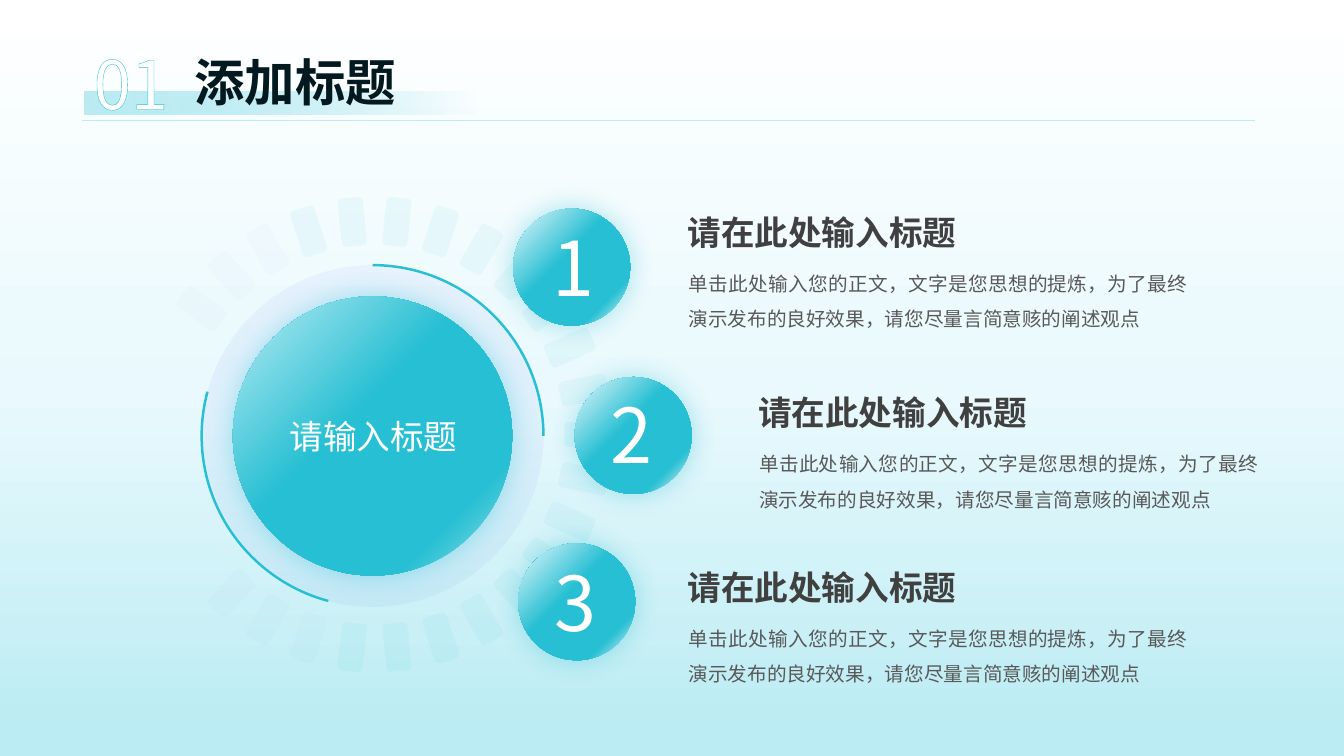
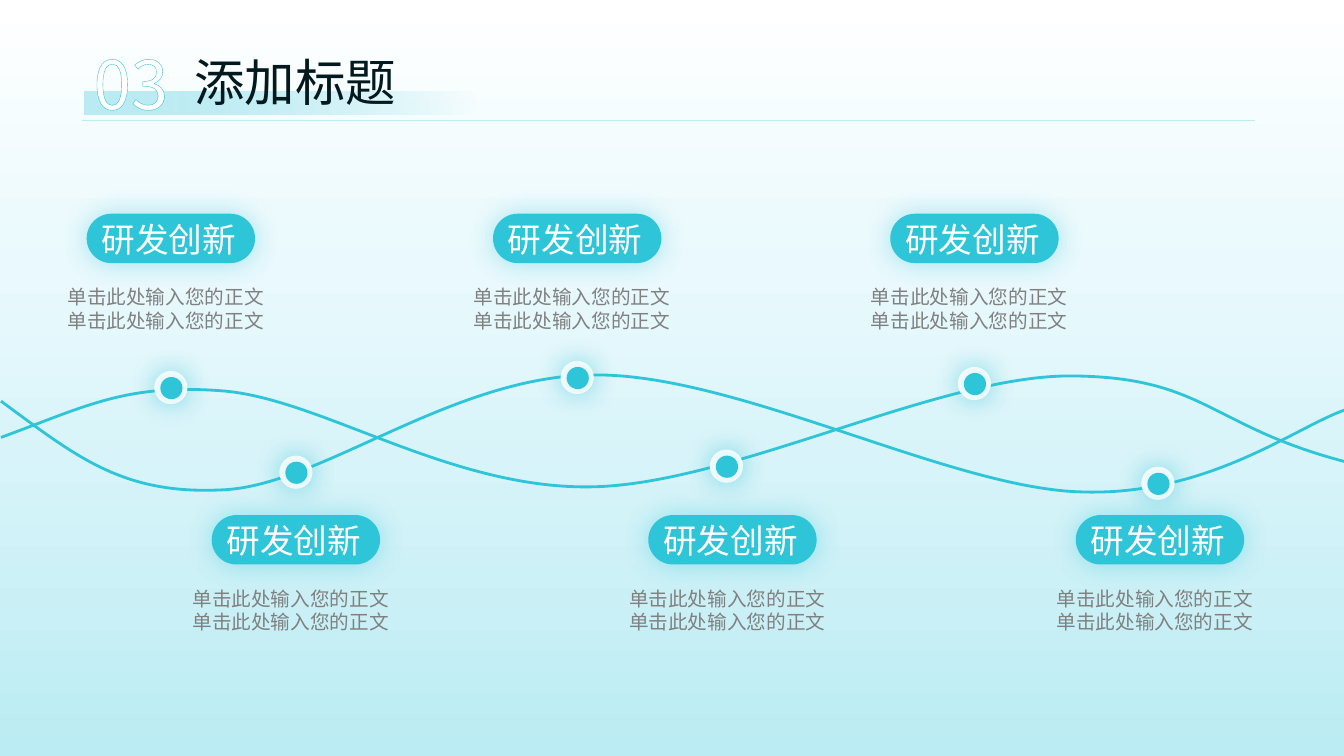
"""Build two teal slides: a numbered hub and a wave timeline."""
from copy import deepcopy
from math import cos, radians, sin

from lxml import etree
from pptx import Presentation
from pptx.dml.color import RGBColor
from pptx.enum.shapes import MSO_CONNECTOR, MSO_SHAPE
from pptx.enum.text import PP_ALIGN
from pptx.oxml.ns import qn
from pptx.util import Inches, Pt

OVAL, ARC = MSO_SHAPE.OVAL, MSO_SHAPE.ARC
RECT, ROUND = MSO_SHAPE.RECTANGLE, MSO_SHAPE.ROUNDED_RECTANGLE
STRAIGHT = MSO_CONNECTOR.STRAIGHT
CENTER, JUSTIFY = PP_ALIGN.CENTER, PP_ALIGN.JUSTIFY

FONT = "Noto Sans CJK SC"
WHITE = RGBColor(0xFF, 0xFF, 0xFF)
ICE = RGBColor(0xE9, 0xF9, 0xFD)
PALE = RGBColor(0xBB, 0xEC, 0xF3)
SKY = RGBColor(0x8D, 0xE0, 0xEB)
AQUA = RGBColor(0x79, 0xD9, 0xE8)
TEAL = RGBColor(0x27, 0xBF, 0xD3)
CYAN = RGBColor(0x2F, 0xC5, 0xD9)
BLUE = RGBColor(0x4C, 0x70, 0xF4)
INK = RGBColor(0x02, 0x19, 0x1F)
DARK = RGBColor(0x40, 0x40, 0x40)
GRAY = RGBColor(0x59, 0x59, 0x59)
MUTED = RGBColor(0x80, 0x80, 0x80)


def gradient(owner, fill, stops, angle):
    fill.gradient()
    fill.gradient_angle = angle
    gs_list = owner.element.find(".//" + qn("a:gsLst"))
    while len(gs_list) < len(stops):
        gs_list.append(deepcopy(gs_list[-1]))
    for stop, (position, color) in zip(fill.gradient_stops, stops):
        stop.position = position / 100
        stop.color.rgb = color
    return gs_list


def add_shape(s, kind, x, y, w, h, color=None, alpha=None, glow=None):
    sp = s.shapes.add_shape(kind, Inches(x), Inches(y), Inches(w), Inches(h))
    sp.shadow.inherit = False
    sp.line.fill.background()
    if color is None:
        sp.fill.background()
    else:
        sp.fill.solid()
        sp.fill.fore_color.rgb = color
    if alpha:
        clr = sp.element.spPr.find(qn("a:solidFill"))[0]
        etree.SubElement(clr, qn("a:alpha"), val=str(alpha * 1000))
    if glow:
        effects = sp.element.spPr.find(qn("a:effectLst"))
        shadow = etree.SubElement(effects, qn("a:outerShdw"), blurRad=str(Pt(19)),
                                  dist="0", algn="ctr", rotWithShape="0")
        clr = etree.SubElement(shadow, qn("a:srgbClr"), val=str(glow))
        etree.SubElement(clr, qn("a:alpha"), val="40000")
    return sp


prs = Presentation()
prs.slide_width, prs.slide_height = Inches(13.33), Inches(7.5)
layout = prs.slide_layouts[6]
for placeholder in list(layout.placeholders):
    layout.shapes.element.remove(placeholder.element)

hub = prs.slides.add_slide(layout)
wave = prs.slides.add_slide(layout)
for s, middle, end in ((hub, 52, 97), (wave, 36, 100)):
    gradient(s, s.background.fill, [(0, WHITE), (middle, ICE), (end, PALE)], 270)

band = add_shape(hub, RECT, 0.84, 0.91, 3.9, 0.23)
band_stops = gradient(band, band.fill, [(0, AQUA), (100, PALE)], 180)
etree.SubElement(band_stops[0][0], qn("a:alpha"), val="0")
rule = hub.shapes.add_connector(STRAIGHT, Inches(0.81), Inches(1.19),
                                Inches(12.45), Inches(1.19))
rule.line.color.rgb = PALE
rule.line.width = Pt(0.5)
etree.SubElement(rule.element.spPr, qn("a:effectLst"))
rule.element.remove(rule.element.find(qn("p:style")))
for sp in (band, rule):
    layout.shapes.element.append(sp.element)

texts = []
for s, number, bold in ((hub, "01", True), (wave, "03", False)):
    texts.append((s, 1.83, 0.46, 2.43, 0.71, "添加标题", 36, INK, {"bold": bold}))
    texts.append((s, 0.83, 0.37, 1.21, 0.91, number, 48, WHITE, {"outline": TEAL}))

add_shape(hub, OVAL, 2, 2.63, 3.39, 3.39, BLUE, alpha=6)
discs = [(2.31, 2.94, 2.77, PALE, SKY)]
discs += [(x, y, 1.16, ICE, ICE) for x, y in ((5.09, 2.07), (5.7, 3.74), (5.14, 5.39))]

for angle in range(-54, 223, 12):
    color, alpha = (TEAL, 6) if -18 <= angle < 198 else (BLUE, 2)
    x = 3.71 + 2.12 * sin(radians(angle))
    y = 4.31 - 2.12 * cos(radians(angle))
    bar = add_shape(hub, ROUND, x - 0.12, y - 0.24, 0.25, 0.48, color, alpha)
    bar.rotation = angle % 360

for x, y, size, first, last in discs:
    disc = add_shape(hub, OVAL, x, y, size, size, glow=TEAL)
    stops = [(0, first), (43, TEAL), (79, TEAL), (98, last)]
    grad = gradient(disc, disc.fill, stops, 0).getparent()
    grad.remove(grad.find(qn("a:lin")))
    circle = etree.SubElement(grad, qn("a:path"), path="circle")
    etree.SubElement(circle, qn("a:fillToRect"), r="100000", b="100000")

for rotation in (0, 195):
    arc = add_shape(hub, ARC, 2, 2.63, 3.39, 3.39)
    arc.rotation = rotation
    arc.line.color.rgb = TEAL
    arc.line.width = Pt(1.75)

texts.append((hub, 2.55, 4.08, 2.31, 0.5, "请输入标题", 24, WHITE, {"align": CENTER}))
body = "单击此处输入您的正文，文字是您思想的提炼，为了最终演示发布的良好效果，请您尽量言简意赅的阐述观点"
items = (("1", 5.38, 2.14, 6.72, 2.05, 2.53), ("2", 5.96, 3.8, 7.42, 3.84, 4.32),
         ("3", 5.4, 5.47, 6.72, 5.58, 6.05))
for number, number_x, number_y, x, y, body_y in items:
    texts.append((hub, number_x, number_y, 0.87, 0.97, number, 54, WHITE, {}))
    texts.append((hub, x, y, 3.24, 0.5, "请在此处输入标题", 24, DARK, {"bold": True}))
    texts.append((hub, x + 0.01, body_y, 5.15, 0.77, body, 14, GRAY,
                  {"align": JUSTIFY, "spacing": 1.5, "after": 10}))

curves = (
    [(0.01, 4.34), (0.86, 4.03), (1.25, 3.8), (2.23, 3.88), (3.21, 3.97),
     (4.48, 4.86), (5.88, 4.83), (7.28, 4.8), (9.31, 3.72), (10.63, 3.73),
     (11.95, 3.74), (12, 4.23), (13.34, 4.58)],
    [(0.01, 3.98), (0.77, 4.54), (1.22, 4.91), (2.21, 4.86), (3.19, 4.82),
     (4.5, 3.71), (5.92, 3.72), (7.33, 3.72), (9.42, 4.84), (10.71, 4.88),
     (11.99, 4.93), (12.87, 4.22), (13.36, 4.06)],
)
for curve in curves:
    points = [(Inches(x), Inches(y)) for x, y in curve]
    builder = wave.shapes.build_freeform(*points[0])
    builder.add_line_segments(points[3::3], close=False)
    sp = builder.convert_to_shape()
    sp.shadow.inherit = False
    sp.fill.background()
    sp.line.color.rgb = CYAN
    sp.line.width = Pt(2)
    for i, segment in enumerate(sp.element.findall(".//" + qn("a:lnTo"))):
        bezier = etree.Element(qn("a:cubicBezTo"))
        for x, y in points[3 * i + 1:3 * i + 4]:
            etree.SubElement(bezier, qn("a:pt"), x=str(x - sp.left), y=str(y - sp.top))
        segment.getparent().replace(segment, bezier)

milestones = ((1.53, 3.68, 0.86, 2.12), (5.56, 3.58, 4.89, 2.12),
              (9.5, 3.64, 8.83, 2.12), (2.77, 4.52, 2.1, 5.11),
              (7.04, 4.46, 6.43, 5.11), (11.32, 4.63, 10.67, 5.11))
for ring_x, ring_y, x, y in milestones:
    add_shape(wave, OVAL, ring_x, ring_y, 0.33, 0.33, WHITE, glow=CYAN)
    add_shape(wave, OVAL, ring_x + 0.06, ring_y + 0.06, 0.22, 0.22, CYAN, glow=CYAN)
    pill = add_shape(wave, ROUND, x, y, 1.67, 0.49, CYAN, glow=CYAN)
    pill.adjustments[0] = 0.5
    texts.append((wave, x + 0.05, y, 1.67, 0.5, "研发创新", 24, WHITE, {}))
    texts.append((wave, x - 0.29, y + 0.66, 2.25, 0.57,
                  "单击此处输入您的正文单击此处输入您的正文", 14, MUTED, {}))

for s, x, y, w, h, words, size, color, style in texts:
    box = s.shapes.add_textbox(Inches(x), Inches(y), Inches(w), Inches(h))
    tf = box.text_frame
    tf.word_wrap = True
    p = tf.paragraphs[0]
    p.alignment = style.get("align")
    p.line_spacing = style.get("spacing")
    if "after" in style:
        p.space_after = Pt(style["after"])
    r = p.add_run()
    r.text = words
    r.font.size = Pt(size)
    r.font.bold = style.get("bold", False)
    r.font.color.rgb = color
    r.font.name = FONT
    run_props = box.element.find(".//" + qn("a:rPr"))
    etree.SubElement(run_props, qn("a:ea"), typeface=FONT)
    if "outline" in style:
        ln = etree.Element(qn("a:ln"), w=str(Pt(1)))
        fill = etree.SubElement(ln, qn("a:solidFill"))
        etree.SubElement(fill, qn("a:srgbClr"), val=str(style["outline"]))
        run_props.insert(0, ln)

prs.save("out.pptx")
